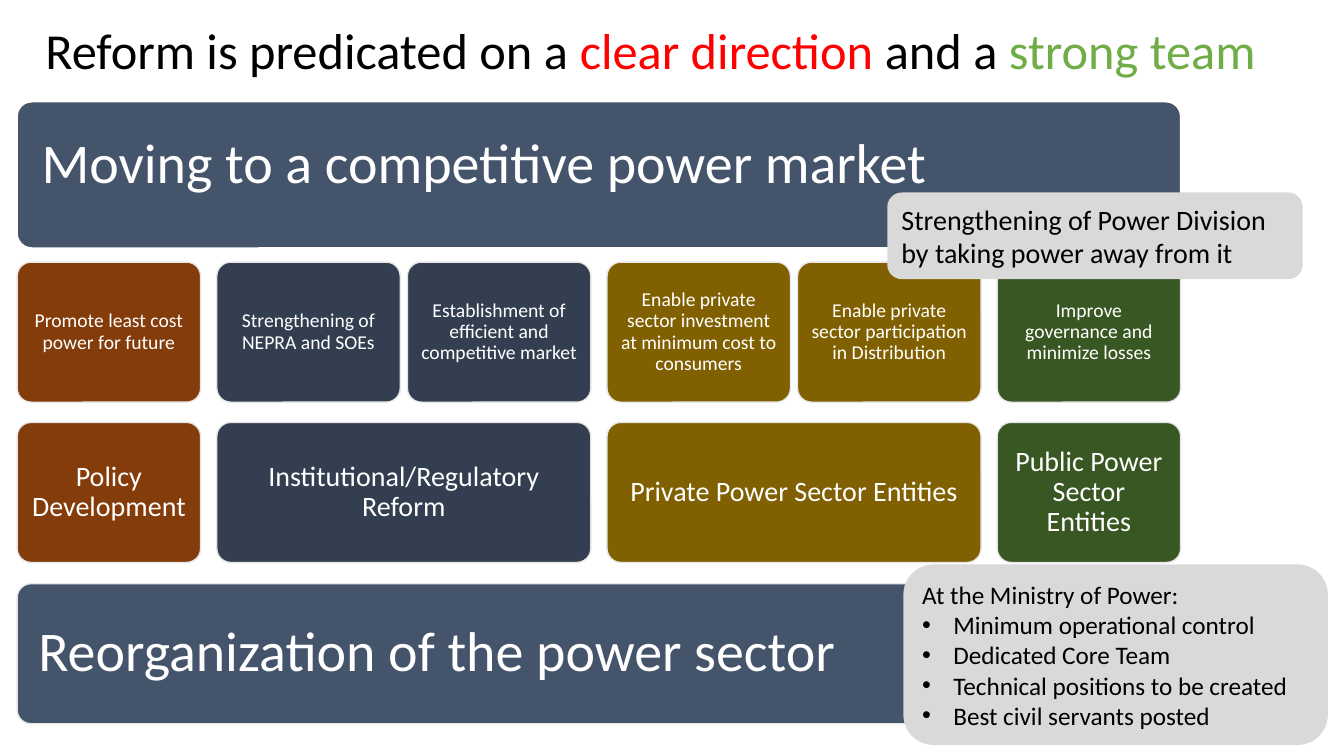
from pptx import Presentation
from pptx.dml.color import RGBColor
from pptx.enum.shapes import MSO_SHAPE
from pptx.enum.text import MSO_ANCHOR, MSO_AUTO_SIZE, PP_ALIGN
from pptx.oxml.ns import qn
from pptx.util import Inches, Pt
from lxml import etree

ROUNDED = MSO_SHAPE.ROUNDED_RECTANGLE
LEFT, CENTER = PP_ALIGN.LEFT, PP_ALIGN.CENTER
MIDDLE = MSO_ANCHOR.MIDDLE
FONT = "Calibri"

COLORS = {
    "black": "000000", "white": "FFFFFF", "red": "FF0000", "leaf": "70AD47",
    "slate": "44546A", "rust": "843C0B", "navy": "333F50", "olive": "806000",
    "forest": "385723", "edge": "E7E6E6", "callout": "D9D9D9",
}

TITLE = [
    ("Reform is predicated on a ", "black"),
    ("clear direction ", "red"),
    ("and a ", "black"),
    ("strong team", "leaf"),
]
GOAL = "Moving to a competitive power market"
FOUNDATION = "Reorganization of the power sector"
PILLARS = [
    ("Policy Development", "rust", ["Promote least cost power for future"]),
    ("Institutional/Regulatory Reform", "navy", [
        "Strengthening of NEPRA and SOEs",
        "Establishment of efficient and competitive market",
    ]),
    ("Private Power Sector Entities", "olive", [
        "Enable private sector investment at minimum cost to consumers",
        "Enable private sector participation in Distribution",
    ]),
    ("Public Power Sector Entities", "forest", ["Improve governance and minimize losses"]),
]
MINISTRY = [
    "At the Ministry of Power:",
    "Minimum operational control",
    "Dedicated Core Team",
    "Technical positions to be created",
    "Best civil servants posted",
]
DIVISION = ["Strengthening of Power Division by taking power away from it"]

MARGIN = 0.17
BAND_W = 11.54
BOX_W, BOX_H = 1.82, 1.39
BOX_GAP, PILLAR_GAP = 0.07, 0.16
ACTION_Y, PILLAR_Y, FOUNDATION_Y = 2.6, 4.19, 5.79


def rgb(name):
    return RGBColor.from_string(COLORS[name])


def style_run(r, size, color):
    r.font.name = FONT
    r.font.size = Pt(size)
    r.font.color.rgb = rgb(color)


def add_box(s, at, lines, fill, size, color="white", edge=None, align=LEFT,
            inset=None, spacing=None, corner=None):
    sp = s.shapes.add_shape(ROUNDED, *[Inches(v) for v in at])
    sp.shadow.inherit = False
    sp.fill.solid()
    sp.fill.fore_color.rgb = rgb(fill)
    if edge:
        sp.line.color.rgb = rgb(edge)
        sp.line.width = Pt(1)
    else:
        sp.line.fill.background()
    if corner:
        sp.adjustments[0] = corner
    tf = sp.text_frame
    tf.word_wrap = True
    tf.vertical_anchor = MIDDLE
    if inset:
        tf.margin_left = tf.margin_right = Inches(inset)
        tf.margin_top = tf.margin_bottom = Inches(inset)
    tf.text = "\n".join(lines)
    for p in tf.paragraphs:
        p.alignment = align
        p.line_spacing = spacing
        for r in p.runs:
            style_run(r, size, color)
    return sp


def add_block(s, at, text, fill, size, inset, align=CENTER, edge="edge"):
    return add_box(s, at, [text], fill, size, edge=edge, align=align,
                   inset=inset, spacing=0.9, corner=0.1)


def add_bullet(p):
    pPr = p._p.get_or_add_pPr()
    pPr.set("marL", str(Inches(0.31)))
    pPr.set("indent", str(-Inches(0.31)))
    etree.SubElement(pPr, qn("a:buFont")).set("typeface", "Arial")
    etree.SubElement(pPr, qn("a:buChar")).set("char", "•")


def add_title(s):
    title = s.shapes.title
    title.left, title.top = Inches(0.35), Inches(0.19)
    title.width, title.height = Inches(12.56), Inches(0.68)
    tf = title.text_frame
    tf.auto_size = MSO_AUTO_SIZE.NONE
    tf.vertical_anchor = MIDDLE
    p = tf.paragraphs[0]
    p.alignment = LEFT
    p.line_spacing = 0.9
    for text, color in TITLE:
        r = p.add_run()
        r.text = text
        style_run(r, 36, color)


def add_pillars(s):
    x = MARGIN
    for name, color, actions in PILLARS:
        width = len(actions) * (BOX_W + BOX_GAP) - BOX_GAP
        add_block(s, (x, PILLAR_Y, width, BOX_H), name, color, 20, 0.08)
        for i, action in enumerate(actions):
            left = x + i * (BOX_W + BOX_GAP)
            add_block(s, (left, ACTION_Y, BOX_W, BOX_H), action, color, 14, 0.06)
        x += width + PILLAR_GAP


def main():
    prs = Presentation()
    prs.slide_width, prs.slide_height = Inches(13.33), Inches(7.5)
    s = prs.slides.add_slide(prs.slide_layouts[5])
    add_title(s)
    add_block(s, (MARGIN, FOUNDATION_Y, BAND_W, BOX_H), FOUNDATION, "slate", 40, 0.17, LEFT)
    add_pillars(s)
    goal = add_block(s, (MARGIN, 1.01, BAND_W, 1.45), GOAL, "slate", 40, 0.2, LEFT, "white")
    goal.text_frame.margin_bottom = Inches(0.38)
    ministry = add_box(s, (8.96, 5.6, 4.21, 1.79), MINISTRY, "callout", 18, "black")
    for p in ministry.text_frame.paragraphs[1:]:
        add_bullet(p)
    add_box(s, (8.8, 1.91, 4.12, 0.86), DIVISION, "callout", 20, "black")
    prs.save("out.pptx")


if __name__ == "__main__":
    main()
